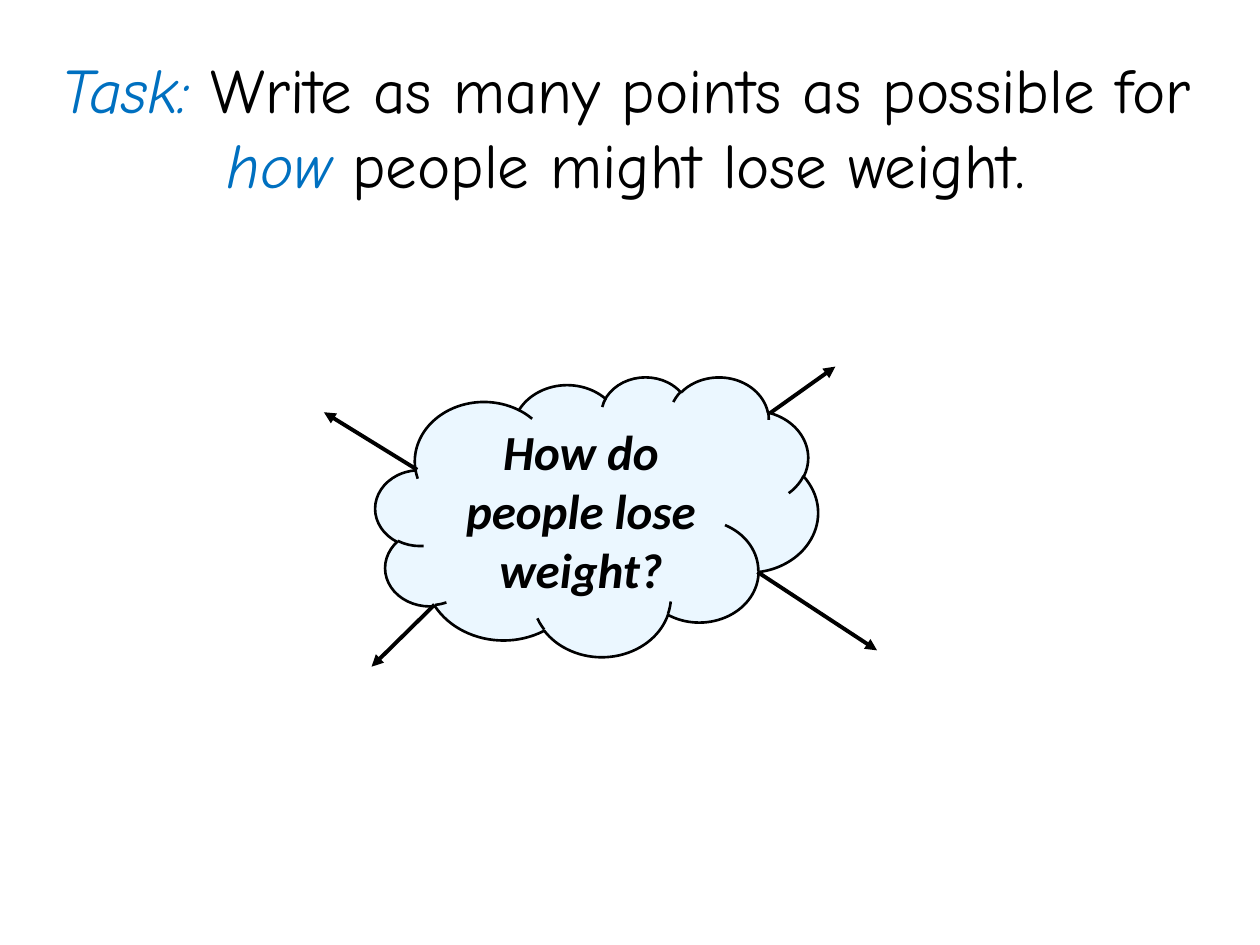
from lxml import etree
from pptx import Presentation
from pptx import util as u
from pptx.dml.color import RGBColor
from pptx.enum import shapes, text
from pptx.oxml.ns import qn

COLORS = {"ink": "000000", "accent": "0070C0", "cloud": "EBF7FF"}
TASK = [
    ("Task: ", True),
    ("Write as many points as possible for ", False),
    ("how ", True),
    ("people might lose weight.", False),
]
# Start and end of each arrow in cm, from the cloud's top left corner
ARROWS = [
    ((7.95, 0.74), (9.27, -0.2)),
    ((0.84, 1.88), (-1.04, 0.72)),
    ((7.7, 3.94), (10.11, 5.52)),
    ((1.19, 4.6), (-0.08, 5.85)),
]


def rgb(name):
    return RGBColor.from_string(COLORS[name])


def add_run(p, words, font, size, color, bold=False, italic=False):
    r = p.add_run()
    r.text = words
    r.font.name = font
    r.font.size = u.Pt(size)
    r.font.bold = bold
    r.font.italic = italic
    r.font.color.rgb = rgb(color)


def add_task(s, left, top, width, height):
    box = s.shapes.add_textbox(u.Cm(left), u.Cm(top), u.Cm(width), u.Cm(height))
    tf = box.text_frame
    tf.word_wrap = True
    tf.auto_size = text.MSO_AUTO_SIZE.SHAPE_TO_FIT_TEXT
    p = tf.paragraphs[0]
    p.alignment = text.PP_ALIGN.CENTER
    for words, accented in TASK:
        add_run(p, words, "Comic Neue", 36,
                "accent" if accented else "ink", italic=accented)


def add_cloud(s, left, top, width, height):
    sp = s.shapes.add_shape(shapes.MSO_SHAPE.CLOUD, u.Cm(left), u.Cm(top),
                            u.Cm(width), u.Cm(height))
    sp.shadow.inherit = False
    sp.fill.solid()
    sp.fill.fore_color.rgb = rgb("cloud")
    sp.line.color.rgb = rgb("ink")
    sp.line.width = u.Pt(1.5)
    tf = sp.text_frame
    tf.word_wrap = True
    tf.vertical_anchor = text.MSO_ANCHOR.MIDDLE
    p = tf.paragraphs[0]
    p.alignment = text.PP_ALIGN.CENTER
    add_run(p, "How do people lose weight?", "Calibri", 28, "ink",
            bold=True, italic=True)


def add_arrows(s, left, top):
    for (x1, y1), (x2, y2) in ARROWS:
        line = s.shapes.add_connector(
            shapes.MSO_CONNECTOR.STRAIGHT,
            u.Cm(left + x1), u.Cm(top + y1), u.Cm(left + x2), u.Cm(top + y2))
        line.line.color.rgb = rgb("ink")
        line.line.width = u.Pt(2.25)
        props = line.element.spPr
        etree.SubElement(props.find(qn("a:ln")), qn("a:tailEnd"), type="triangle")
        etree.SubElement(props, qn("a:effectLst"))


def main():
    prs = Presentation()
    prs.slide_width, prs.slide_height = u.Cm(25.4), u.Cm(19.05)
    s = prs.slides.add_slide(prs.slide_layouts[6])
    left, top = 7.57, 7.59
    add_cloud(s, left, top, 8.92, 5.64)
    add_task(s, 0.71, 0.89, 23.83, 3.33)
    add_arrows(s, left, top)
    prs.save("out.pptx")


if __name__ == "__main__":
    main()
